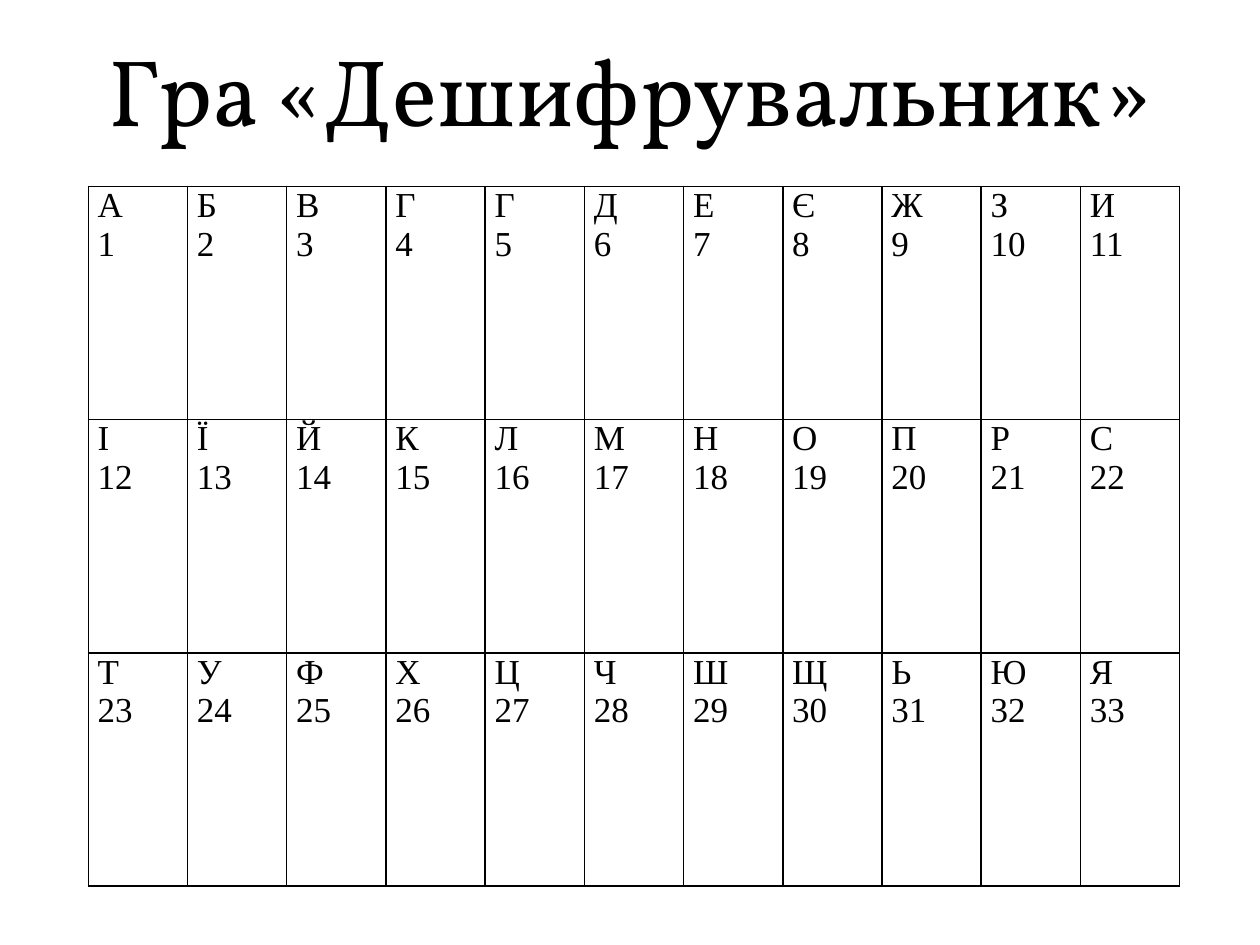
from typing import NamedTuple

from lxml.etree import SubElement
from pptx import Presentation
from pptx.dml.color import RGBColor
from pptx.enum.text import MSO_ANCHOR, PP_ALIGN
from pptx.oxml.ns import qn
from pptx.util import Cm, Pt

BLACK = "000000"
TITLE = "Гра «Дешифрувальник»"
ALPHABET_ROWS = ("АБВГГДЕЄЖЗИ", "ІЇЙКЛМНОПРС", "ТУФХЦЧШЩЬЮЯ")
COL_WIDTH, ROW_HEIGHT = Cm(2), Cm(4.7)


class Style(NamedTuple):
    font: str
    size: float
    color: str = BLACK


class CodeCell(NamedTuple):
    letter: str
    number: int


TITLE_STYLE = Style("Vollkorn", 54)
CELL_STYLE = Style("Times New Roman", 20)


def rgb(value: str) -> RGBColor:
    return RGBColor.from_string(value)


def add_run(p, text: str, style: Style) -> None:
    r = p.add_run()
    r.text = text
    r.font.name = style.font
    r.font.size = Pt(style.size)
    r.font.bold = False
    r.font.color.rgb = rgb(style.color)


def add_borders(cell, color: str, width: float) -> None:
    tc_pr = cell._tc.get_or_add_tcPr()
    for side in ("a:lnL", "a:lnR", "a:lnT", "a:lnB"):
        ln = SubElement(tc_pr, qn(side), w=str(Pt(width)))
        fill = SubElement(ln, qn("a:solidFill"))
        SubElement(fill, qn("a:srgbClr"), val=color)


def draw_cell(cell, code: CodeCell) -> None:
    add_borders(cell, BLACK, 1)
    cell.fill.background()
    cell.margin_left = cell.margin_right = Cm(0.19)
    cell.margin_top = cell.margin_bottom = 0
    cell.vertical_anchor = MSO_ANCHOR.TOP
    tf = cell.text_frame
    add_run(tf.paragraphs[0], code.letter, CELL_STYLE)
    add_run(tf.add_paragraph(), str(code.number), CELL_STYLE)


def draw_title(s) -> None:
    sp = s.shapes.title
    sp.left, sp.top, sp.width, sp.height = Cm(1.27), Cm(0.76), Cm(22.86), Cm(3.18)
    tf = sp.text_frame
    tf.word_wrap = True
    tf.vertical_anchor = MSO_ANCHOR.MIDDLE
    tf.margin_bottom = Cm(1.27)
    p = tf.paragraphs[0]
    p.alignment = PP_ALIGN.CENTER
    add_run(p, TITLE, TITLE_STYLE)


def draw_cipher_table(s) -> None:
    """Number the letters in reading order and give each its own cell."""
    n_rows, n_cols = len(ALPHABET_ROWS), len(ALPHABET_ROWS[0])
    table = s.shapes.add_table(n_rows, n_cols, Cm(1.78), Cm(3.76),
                               COL_WIDTH * n_cols, ROW_HEIGHT * n_rows).table
    table.first_row = table.horz_banding = False
    for column in table.columns:
        column.width = COL_WIDTH
    for i, letters in enumerate(ALPHABET_ROWS):
        table.rows[i].height = ROW_HEIGHT
        for j, letter in enumerate(letters):
            draw_cell(table.cell(i, j), CodeCell(letter, i * n_cols + j + 1))


def main() -> None:
    prs = Presentation()
    prs.slide_width, prs.slide_height = Cm(25.4), Cm(19.05)
    s = prs.slides.add_slide(prs.slide_layouts[5])
    draw_title(s)
    draw_cipher_table(s)
    prs.save("out.pptx")


if __name__ == "__main__":
    main()
